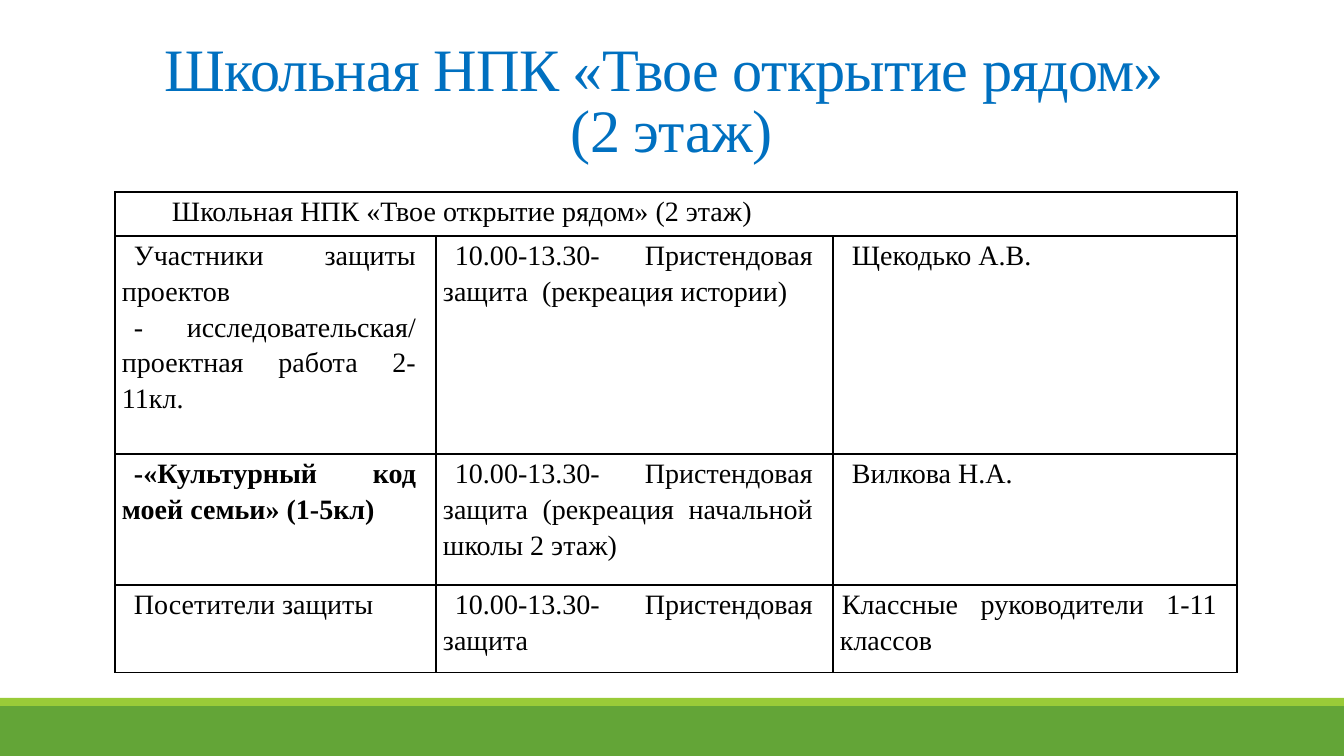
"""Build the school conference schedule slide: title, table and footer bars."""
import pptx
import pptx.dml.color
import pptx.enum.shapes
import pptx.enum.text
import pptx.oxml
import pptx.oxml.ns
import pptx.util

PX = 914400 / 100.8
FONT = "Times New Roman"
COLORS = {"title": "0070C0", "text": "000000", "border": "000000",
          "footer": "63A537", "stripe": "99CB38"}


def px(n):
    return pptx.util.Emu(round(n * PX))


def style_run(r, size, color):
    r.font.name = FONT
    r.font.size = pptx.util.Pt(size)
    r.font.color.rgb = pptx.dml.color.RGBColor.from_string(COLORS[color])


prs = pptx.Presentation()
prs.slide_width, prs.slide_height = px(1344), px(756)
s = prs.slides.add_slide(prs.slide_layouts[5])

for name, top, height in [("footer", 706, 50), ("stripe", 698, 8)]:
    sp = s.shapes.add_shape(pptx.enum.shapes.MSO_SHAPE.RECTANGLE, 0, px(top), px(1344), px(height))
    sp.shadow.inherit = False
    sp.fill.solid()
    sp.fill.fore_color.rgb = pptx.dml.color.RGBColor.from_string(COLORS[name])
    sp.line.fill.background()

title = s.shapes.title
title.left, title.top, title.width, title.height = px(107), px(75), px(1109), px(168)
tf = title.text_frame
tf.text = "Школьная НПК «Твое открытие рядом» \v(2 этаж)"
tf.word_wrap = True
tf.auto_size = pptx.enum.text.MSO_AUTO_SIZE.NONE
tf.vertical_anchor = pptx.enum.text.MSO_ANCHOR.BOTTOM
tf.margin_bottom = px(78)
p = tf.paragraphs[0]
p.alignment = pptx.enum.text.PP_ALIGN.CENTER
p.line_spacing = 0.85
p._p.get_or_add_pPr().set("marL", str(px(20)))
for r in p.runs:
    style_run(r, 43, "title")
    r._r.get_or_add_rPr().set("spc", "-50")

rows = [
    ["Школьная НПК «Твое открытие рядом» (2 этаж)", "", ""],
    ["Участники защиты проектов \n- исследовательская/ проектная работа 2-11кл.",
     "10.00-13.30- Пристендовая защита  (рекреация истории)", "Щекодько А.В."],
    ["-«Культурный код моей семьи» (1-5кл)",
     "10.00-13.30- Пристендовая защита (рекреация начальной школы 2 этаж)", "Вилкова Н.А."],
    ["Посетители защиты", "10.00-13.30- Пристендовая защита",
     "Классные руководители 1-11 классов"],
]
col_widths = [321, 397, 404]
row_heights = [44, 218, 131, 88]
indents = {(0, 0): (20, 30), (3, 2): (0, 2)}

table = s.shapes.add_table(len(rows), len(col_widths), px(115), px(192),
                           px(sum(col_widths)), px(sum(row_heights))).table
table.first_row = table.horz_banding = False
for col, width in zip(table.columns, col_widths):
    col.width = px(width)
for row, height in zip(table.rows, row_heights):
    row.height = px(height)
table.cell(0, 0).merge(table.cell(0, 2))

for i, texts in enumerate(rows):
    for j, text in enumerate(texts):
        cell = table.cell(i, j)
        cell.margin_left = cell.margin_right = px(7)
        cell.margin_top = cell.margin_bottom = 0
        tcPr = cell._tc.get_or_add_tcPr()
        for side in ("lnL", "lnR", "lnT", "lnB"):
            tcPr.append(pptx.oxml.parse_xml(
                f'<a:{side} {pptx.oxml.ns.nsdecls("a")} w="12700"><a:solidFill>'
                f'<a:srgbClr val="{COLORS["border"]}"/></a:solidFill></a:{side}>'))
        cell.fill.background()
        if not text:
            continue
        cell.text_frame.text = text
        left, first = indents.get((i, j), (0, 12))
        for p in cell.text_frame.paragraphs:
            p.alignment = pptx.enum.text.PP_ALIGN.JUSTIFY
            p.line_spacing = 1.15
            pPr = p._p.get_or_add_pPr()
            pPr.set("marL", str(px(left)))
            pPr.set("marR", str(px(13)))
            pPr.set("indent", str(px(first)))
            for r in p.runs:
                style_run(r, 20, "text")
                r.font.bold = (i, j) == (2, 0)

prs.save("out.pptx")
